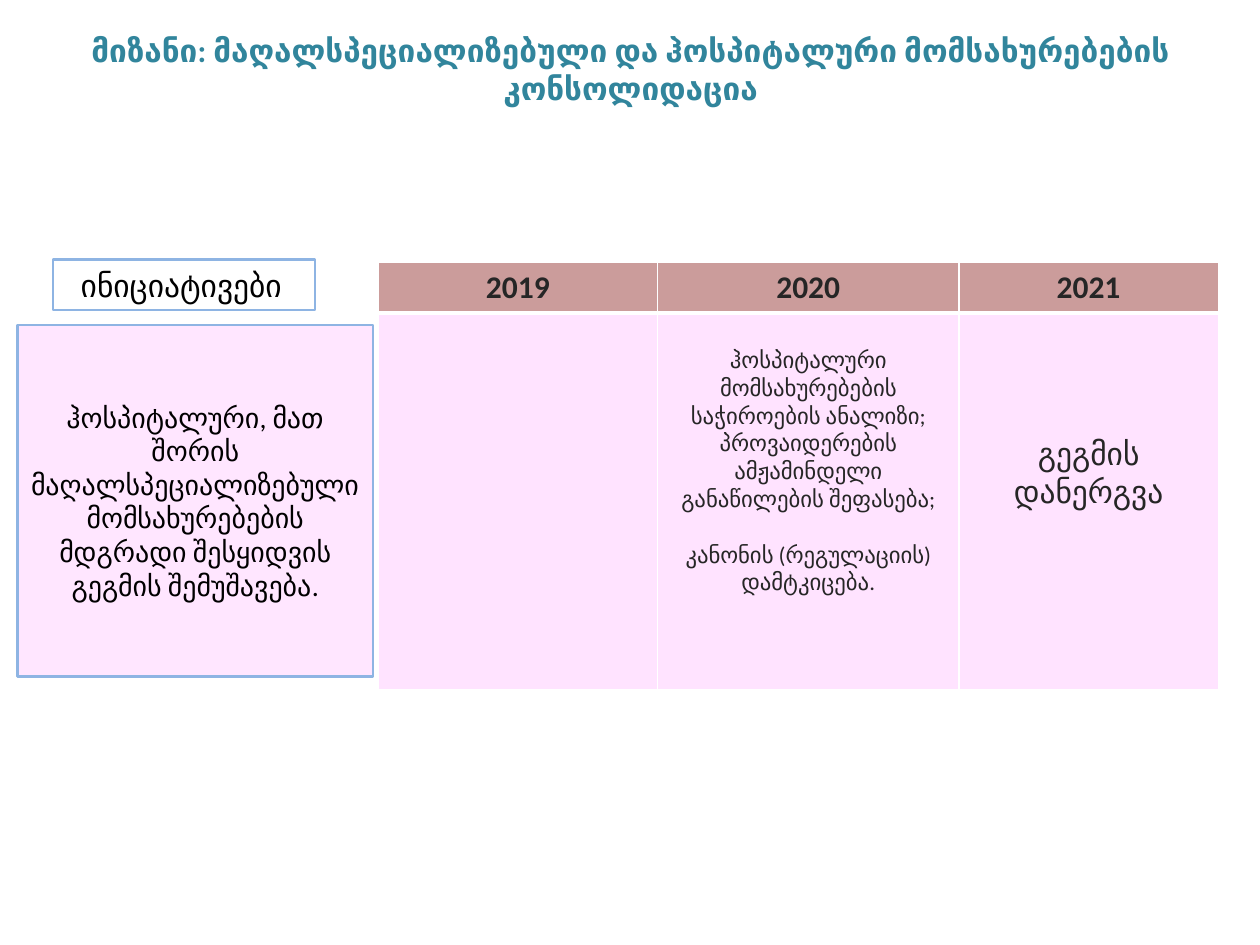
import dataclasses

import lxml.etree
import pptx
import pptx.dml.color
import pptx.enum.shapes
import pptx.enum.text
import pptx.oxml.ns
import pptx.util

Inches = pptx.util.Inches
Pt = pptx.util.Pt
Anchor = pptx.enum.text.MSO_ANCHOR
Align = pptx.enum.text.PP_ALIGN


@dataclasses.dataclass(frozen=True)
class Theme:
    """Colours, font and type sizes of the slide."""
    font: str = "Calibri"
    title: str = "31859C"
    text: str = "000000"
    cell_text: str = "262626"
    outline: str = "8EB4E3"
    header: str = "953735"
    panel: str = "FFCCFF"
    border: str = "FFFFFF"
    large: int = 18
    medium: int = 16
    small: int = 13


THEME = Theme()
TITLE = "მიზანი: მაღალსპეციალიზებული და ჰოსპიტალური მომსახურებების კონსოლიდაცია"
LABEL = "ინიციატივები"
INITIATIVE = ("ჰოსპიტალური, მათ შორის მაღალსპეციალიზებული მომსახურებების "
              "მდგრადი შესყიდვის გეგმის შემუშავება.")
YEARS = ["2019", "2020", "2021"]
ANALYSIS = ["ჰოსპიტალური მომსახურებების",
            "საჭიროების ანალიზი; პროვაიდერების ამჟამინდელი განაწილების შეფასება;",
            "კანონის (რეგულაციის) დამტკიცება."]
ROLLOUT = ["გეგმის დანერგვა"]


def set_all(target, values):
    """Set every attribute named in values on target."""
    for name, value in values.items():
        setattr(target, name, value)


def write(frame, lines, size, color, bold=False, align=Align.CENTER):
    """Fill a text frame with one paragraph per line and return them."""
    frame.word_wrap = True
    frame.text = "\n".join(lines)
    for para in frame.paragraphs:
        para.alignment = align
        for span in para.runs:
            set_all(span.font, {"name": THEME.font, "size": Pt(size), "bold": bold})
            span.font.color.rgb = pptx.dml.color.RGBColor.from_string(color)
    return frame.paragraphs


def paint(fill, holder, color, opacity):
    """Give a fill a solid colour with the given opacity in percent."""
    fill.solid()
    fill.fore_color.rgb = pptx.dml.color.RGBColor.from_string(color)
    tone = holder.find(pptx.oxml.ns.qn("a:solidFill"))[0]
    lxml.etree.SubElement(tone, pptx.oxml.ns.qn("a:alpha"), val=str(opacity * 1000))


def draw_borders(cell, widths):
    """Draw the left, right, top and bottom borders of a cell."""
    qn = pptx.oxml.ns.qn
    properties = cell._tc.get_or_add_tcPr()
    for place, (side, width) in enumerate(zip("LRTB", widths)):
        line = lxml.etree.Element(qn(f"a:ln{side}"), w=str(Pt(width)))
        fill = lxml.etree.SubElement(line, qn("a:solidFill"))
        lxml.etree.SubElement(fill, qn("a:srgbClr"), val=THEME.border)
        properties.insert(place, line)


def add_title(page, box):
    """Place the slide title in its placeholder."""
    title = page.shapes.title
    set_all(title, dict(zip(("left", "top", "width", "height"), box)))
    title.text_frame.vertical_anchor = Anchor.MIDDLE
    write(title.text_frame, [TITLE], THEME.large, THEME.title, bold=True)


def add_outlined_box(page, box):
    """Add an unfilled rectangle with the theme outline."""
    shape = page.shapes.add_shape(pptx.enum.shapes.MSO_SHAPE.RECTANGLE, *box)
    shape.shadow.inherit = False
    shape.fill.background()
    shape.line.color.rgb = pptx.dml.color.RGBColor.from_string(THEME.outline)
    shape.line.width = Pt(1.5)
    shape.text_frame.vertical_anchor = Anchor.MIDDLE
    return shape


def add_initiatives(page, box):
    """Add the initiatives label above its filled panel."""
    left, top, width, height = box
    label = add_outlined_box(page, (left + Inches(0.28), top, Inches(2.08), Inches(0.4)))
    label.text_frame.margin_left = Inches(0.22)
    write(label.text_frame, [LABEL], THEME.large, THEME.text, align=Align.LEFT)
    drop = Inches(0.52)
    panel = add_outlined_box(page, (left, top + drop, width, height - drop))
    paint(panel.fill, panel._element.spPr, THEME.panel, 49)
    write(panel.text_frame, [INITIATIVE], THEME.medium, THEME.text)


def add_schedule(page, box):
    """Add the table of yearly steps."""
    table = page.shapes.add_table(2, len(YEARS), *box).table
    for column, width in zip(table.columns, (2.22, 2.39, 2.06)):
        column.width = Inches(width)
    table.rows[0].height = Inches(0.4)
    table.rows[1].height = box[3] - Inches(0.4)
    steps = [([], THEME.small, 0.05), (ANALYSIS, THEME.small, 0.27),
             (ROLLOUT, THEME.large, 0.97)]
    for column, (year, (lines, size, margin)) in enumerate(zip(YEARS, steps)):
        head, body = table.cell(0, column), table.cell(1, column)
        for cell, color, opacity, widths in ((head, THEME.header, 49, (1, 1, 1, 3)),
                                             (body, THEME.panel, 55, (1, 1, 3, 1))):
            paint(cell.fill, cell._tc.get_or_add_tcPr(), color, opacity)
            draw_borders(cell, widths)
        write(head.text_frame, [year], THEME.large, THEME.cell_text, bold=True)
        body.margin_top = Inches(margin)
        paras = write(body.text_frame, lines, size, THEME.cell_text)
        if len(paras) > 1:
            paras[-1].space_before = Pt(16)


def main():
    """Build the slide and save the deck."""
    deck = pptx.Presentation()
    set_all(deck, {"slide_width": Inches(10), "slide_height": Inches(7.5)})
    page = deck.slides.add_slide(deck.slide_layouts[5])
    regions = ((add_title, (0.17, 0.17, 9.67, 0.75)),
               (add_initiatives, (0.14, 2.06, 2.82, 3.31)),
               (add_schedule, (3, 2.08, 6.67, 3.39)))
    for build, box in regions:
        build(page, [Inches(length) for length in box])
    deck.save("out.pptx")


if __name__ == "__main__":
    main()
